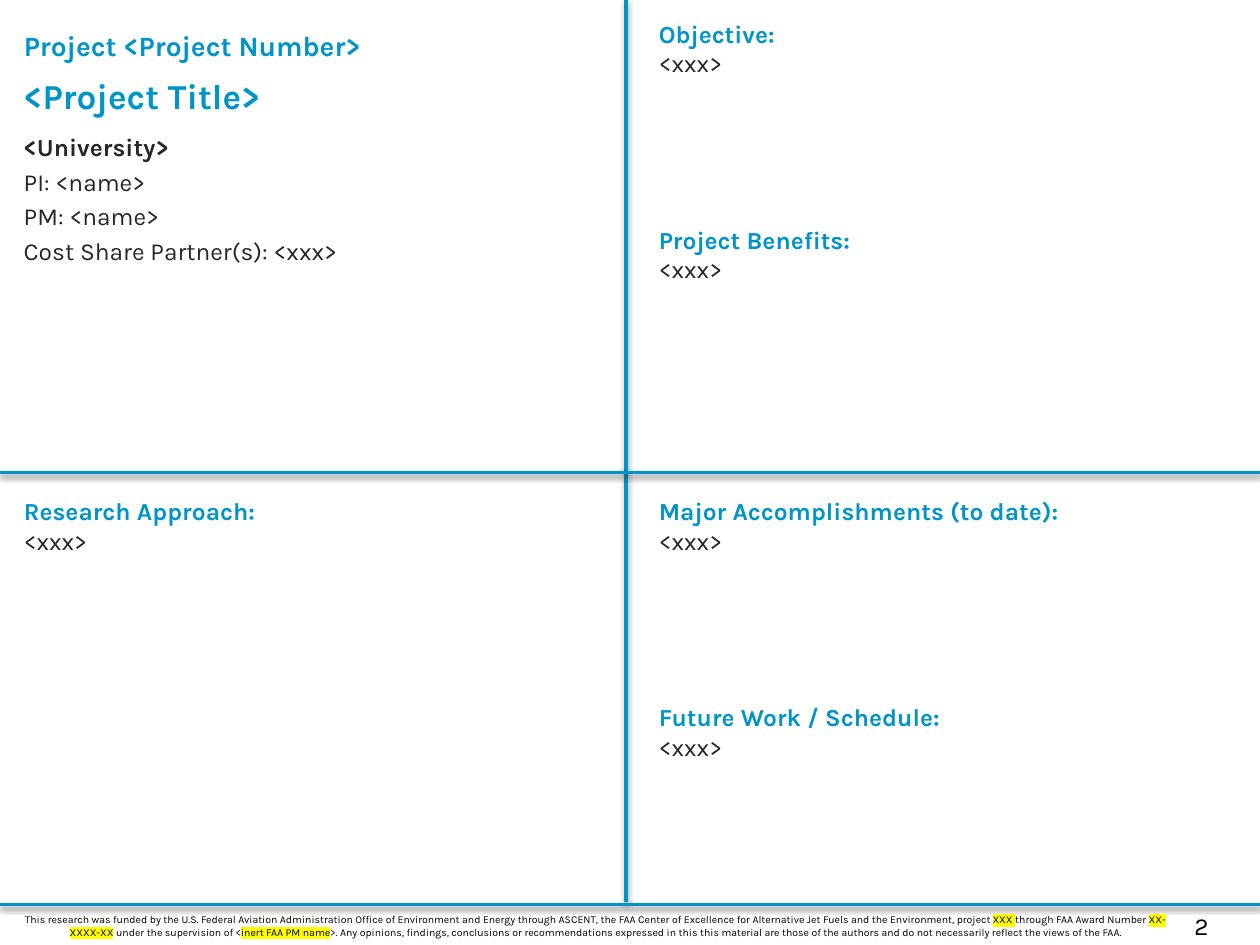
from dataclasses import dataclass

import lxml.etree
import pptx
import pptx.dml.color
import pptx.enum.shapes
import pptx.enum.text
import pptx.oxml.ns
import pptx.util

BLUE = pptx.dml.color.RGBColor(0x00, 0x94, 0xC8)
DARK = pptx.dml.color.RGBColor(0x26, 0x26, 0x26)
BLACK = pptx.dml.color.RGBColor(0x00, 0x00, 0x00)
YELLOW = pptx.dml.color.RGBColor(0xFF, 0xFF, 0x00)

FONT = "Karla"
CELL = pptx.util.Inches(0.1)
COLUMNS, ROWS = 100, 75
LEFT, RIGHT = 0.9, 51.3
UPPER, LOWER = 1, 38.9
PANEL_WIDTH, PANEL_HEIGHT = 47.8, 34.2
HANGING = pptx.util.Inches(0.38)
SECTION_GAP = 84


@dataclass(frozen=True)
class Area:
    column: float
    row: float
    columns: float
    rows: float


@dataclass(frozen=True)
class Span:
    text: str
    highlighted: bool = False


@dataclass(frozen=True)
class Line:
    spans: tuple[Span, ...]
    size: float = 14
    color: pptx.dml.color.RGBColor = DARK
    bold: bool = False
    before: float = 0
    after: float = 0
    spacing: float = 1
    hanging: bool = False
    centered: bool = False


@dataclass(frozen=True)
class Divider:
    start: tuple[float, float]
    end: tuple[float, float]


@dataclass(frozen=True)
class Panel:
    column: float
    row: float
    headings: tuple[str, ...]


DIVIDERS = (
    Divider((49.7, 0), (49.7, 71.6)),
    Divider((0, 37.5), (COLUMNS, 37.5)),
    Divider((0, 71.8), (COLUMNS, 71.8)),
)

PANELS = (
    Panel(RIGHT, UPPER, ("Objective:", "Project Benefits:")),
    Panel(LEFT, LOWER, ("Research Approach:",)),
    Panel(RIGHT, LOWER, ("Major Accomplishments (to date):", "Future Work / Schedule:")),
)

PROJECT_NUMBER = Line((Span("Project <Project Number>"),), 16, BLUE, True, spacing=0.8)

PROJECT_DETAILS = (
    Line((Span("<Project Title>"),), 20, BLUE, True, after=6),
    Line((Span("<University>"),), bold=True, before=3),
    *(
        Line((Span(text),), before=3)
        for text in ("PI: <name>", "PM: <name>", "Cost Share Partner(s): <xxx>")
    ),
)

FUNDING_NOTE = Line(
    (
        Span(
            "This research was funded by the U.S. Federal Aviation Administration Office of "
            "Environment and Energy through ASCENT, the FAA Center of Excellence for "
            "Alternative Jet Fuels and the Environment, project "
        ),
        Span("XXX ", True),
        Span("through FAA Award Number "),
        Span("XX-XXXX-XX", True),
        Span(" under the supervision of <"),
        Span("inert FAA PM name", True),
        Span(
            ">. Any opinions, findings, conclusions or recommendations expressed in this this "
            "material are those of the authors and do not necessarily reflect the views of the FAA."
        ),
    ),
    6,
    BLACK,
    centered=True,
)


def grid(cells: float) -> int:
    return round(cells * CELL)


def add_child(parent, tag: str, **attributes: str):
    child = lxml.etree.SubElement(parent, pptx.oxml.ns.qn(tag))
    for key, value in attributes.items():
        child.set(key, value)
    return child


def write_line(paragraph, line: Line) -> None:
    if line.hanging:
        properties = paragraph._p.get_or_add_pPr()
        properties.set("marL", str(HANGING))
        properties.set("indent", str(-HANGING))
    if line.centered:
        paragraph.alignment = pptx.enum.text.PP_ALIGN.CENTER
    paragraph.line_spacing = line.spacing
    paragraph.space_before = pptx.util.Pt(line.before)
    paragraph.space_after = pptx.util.Pt(line.after)
    paragraph.font.name = FONT
    paragraph.font.size = pptx.util.Pt(line.size)
    paragraph.font.bold = line.bold
    paragraph.font.color.rgb = line.color
    for span in line.spans:
        run = paragraph.add_run()
        run.text = span.text
        if span.highlighted:
            highlight = add_child(run._r.get_or_add_rPr(), "a:highlight")
            add_child(highlight, "a:srgbClr", val=str(YELLOW))


def add_text(
    slide,
    area: Area,
    lines: tuple[Line, ...],
    anchor=pptx.enum.text.MSO_ANCHOR.TOP,
    wrap: bool = True,
) -> None:
    frame = slide.shapes.add_textbox(
        grid(area.column), grid(area.row), grid(area.columns), grid(area.rows)
    ).text_frame
    frame.word_wrap = wrap
    frame.vertical_anchor = anchor
    for index, line in enumerate(lines):
        write_line(frame.add_paragraph() if index else frame.paragraphs[0], line)


def add_divider(slide, divider: Divider) -> None:
    connector = slide.shapes.add_connector(
        pptx.enum.shapes.MSO_CONNECTOR.STRAIGHT,
        *(grid(cells) for cells in divider.start + divider.end),
    )
    connector.line.color.rgb = BLUE
    connector.line.width = pptx.util.Pt(2)
    effects = add_child(connector._element.spPr, "a:effectLst")
    shadow = add_child(
        effects, "a:outerShdw", blurRad="40000", dist="20000", dir="5400000", rotWithShape="0"
    )
    shade = add_child(shadow, "a:srgbClr", val=str(BLACK))
    add_child(shade, "a:alpha", val="38000")


def add_panel(slide, panel: Panel) -> None:
    lines = []
    for index, heading in enumerate(panel.headings):
        gap = SECTION_GAP if index else 0
        lines.append(Line((Span(heading),), color=BLUE, bold=True, before=gap, hanging=True))
        lines.append(Line((Span("<xxx>"),), hanging=True))
    add_text(slide, Area(panel.column, panel.row, PANEL_WIDTH, PANEL_HEIGHT), tuple(lines))


def main() -> None:
    presentation = pptx.Presentation()
    presentation.slide_width = grid(COLUMNS)
    presentation.slide_height = grid(ROWS)
    slide = presentation.slides.add_slide(presentation.slide_layouts[6])

    page_number = Line((Span("2"),), color=BLACK)
    add_text(slide, Area(93.8, 71.8, 4.9, 3.4), (page_number,), wrap=False)
    add_text(
        slide,
        Area(LEFT, 1.7, 47.9, 3.7),
        (PROJECT_NUMBER,),
        anchor=pptx.enum.text.MSO_ANCHOR.BOTTOM,
    )
    add_text(slide, Area(LEFT, 5.4, 48.4, 28.8), PROJECT_DETAILS)
    for divider in DIVIDERS:
        add_divider(slide, divider)
    for panel in PANELS:
        add_panel(slide, panel)
    add_text(slide, Area(0, 72, 94.5, 3), (FUNDING_NOTE,))

    presentation.save("out.pptx")


if __name__ == "__main__":
    main()
